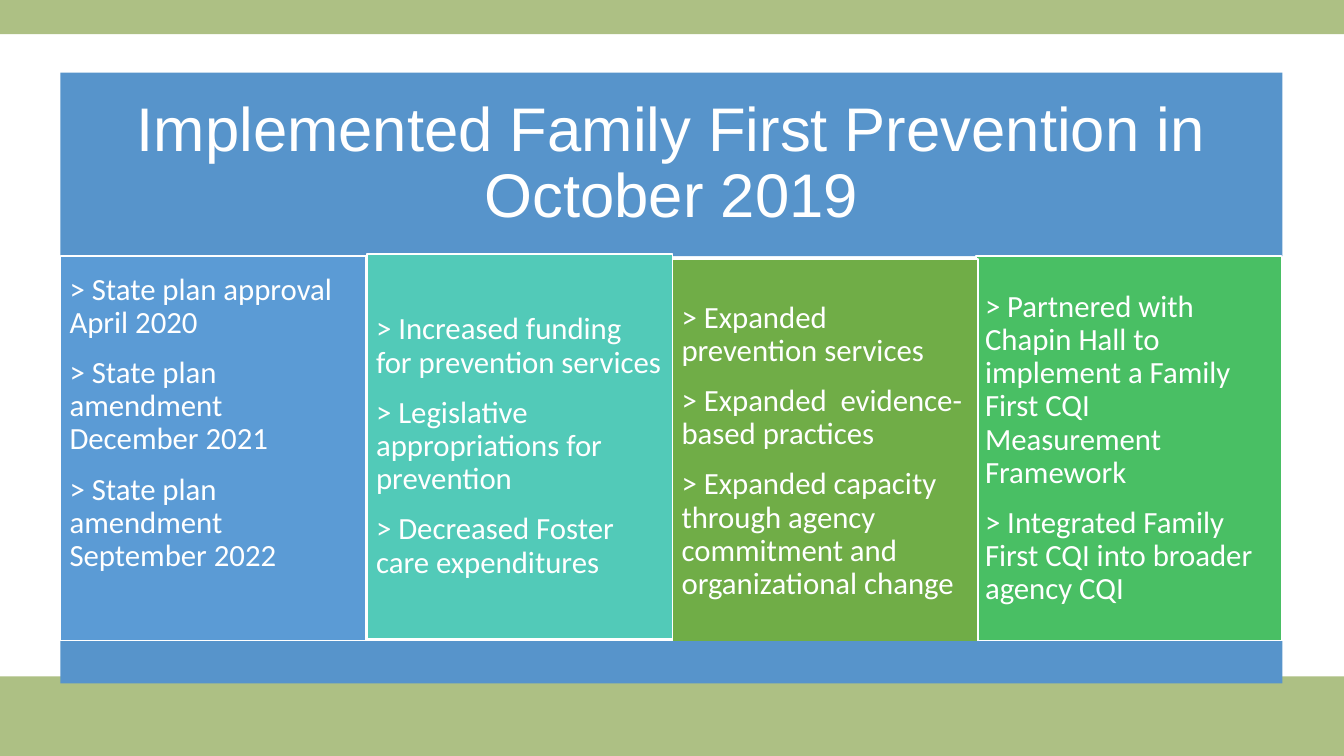
from pptx import Presentation
from pptx import util as u
from pptx.dml.color import RGBColor
from pptx.enum import shapes, text

PX = 9144  # EMU per px, 100 px to the inch
COLORS = {
    "white": "FFFFFF",
    "band": "ADC084",
    "header": "5794CB",
    "blue": "5B9BD5",
    "teal": "52CAB8",
    "olive": "70AD47",
    "green": "49BF64",
}
SLIDE_WIDTH, SLIDE_HEIGHT = 1333, 750
PANEL_LEFT, PANEL_WIDTH = 60, 1212
COLUMN_WIDTH, COLUMN_HEIGHT = 303, 382


class SlideBuilder:
    def __init__(self, presentation):
        self.slide = presentation.slides.add_slide(presentation.slide_layouts[6])

    def color(self, name):
        return RGBColor.from_string(COLORS[name])

    def block(self, left, top, width, height, fill, outlined=False):
        """Add a plain rectangle, with a thin white outline if wanted."""
        shape = self.slide.shapes.add_shape(
            shapes.MSO_SHAPE.RECTANGLE,
            *(u.Emu(value * PX) for value in (left, top, width, height)))
        shape.shadow.inherit = False
        shape.fill.solid()
        shape.fill.fore_color.rgb = self.color(fill)
        if outlined:
            shape.line.color.rgb = self.color("white")
            shape.line.width = u.Pt(1)
        else:
            shape.line.fill.background()
        return shape

    def label(self, shape, lines, font, size, align, inset, space_after=0, bottom=None):
        """Fill a shape with white paragraphs, centred vertically."""
        frame = shape.text_frame
        frame.word_wrap = True
        frame.vertical_anchor = text.MSO_ANCHOR.MIDDLE
        frame.margin_left = frame.margin_right = frame.margin_top = u.Emu(inset * PX)
        frame.margin_bottom = u.Emu((bottom or inset) * PX)
        frame.text = "\n".join(lines)
        for paragraph in frame.paragraphs:
            paragraph.alignment = align
            paragraph.line_spacing = 0.9
            paragraph.space_after = u.Pt(space_after)
            paragraph.font.name = font
            paragraph.font.size = u.Pt(size)
            paragraph.font.color.rgb = self.color("white")

    def title(self, wording, top, height):
        shape = self.block(PANEL_LEFT, top, PANEL_WIDTH, height, "header")
        self.label(shape, [wording], "Arial", 44, text.PP_ALIGN.CENTER, 18)

    def column(self, left, top, fill, lines, bottom):
        shape = self.block(left, top, COLUMN_WIDTH, COLUMN_HEIGHT, fill, outlined=True)
        self.label(shape, lines, "Calibri", 22, text.PP_ALIGN.LEFT, 9, 12, bottom)


# Left, top, fill, lines and bottom inset, from back to front
COLUMNS = [
    (60, 254, "blue", [
        "> State plan approval April 2020",
        "> State plan amendment December 2021",
        "> State plan amendment September 2022"], 59),
    (364, 252, "teal", [
        "> Increased funding for prevention services",
        "> Legislative appropriations for prevention",
        "> Decreased Foster care expenditures"], 9),
    (968, 254, "green", [
        "> Partnered with Chapin Hall to implement a Family First CQI "
        "Measurement Framework",
        "> Integrated Family First CQI into broader agency CQI"], 9),
    (667, 257, "olive", [
        "> Expanded prevention services",
        "> Expanded  evidence-based practices",
        "> Expanded capacity through agency commitment and "
        "organizational change"], 9),
]


def main():
    presentation = Presentation()
    presentation.slide_width = u.Emu(SLIDE_WIDTH * PX)
    presentation.slide_height = u.Emu(SLIDE_HEIGHT * PX)
    builder = SlideBuilder(presentation)

    # Bands at the slide's bottom and top edges
    builder.block(0, 671, SLIDE_WIDTH, 79, "band")
    builder.block(0, 0, SLIDE_WIDTH, 34, "band")

    # Panel: title, four columns, footer bar
    builder.title("Implemented Family First Prevention in October 2019", 72, 182)
    for column in COLUMNS:
        builder.column(*column)
    builder.block(PANEL_LEFT, 636, PANEL_WIDTH, 42, "header")

    presentation.save("out.pptx")


if __name__ == "__main__":
    main()
